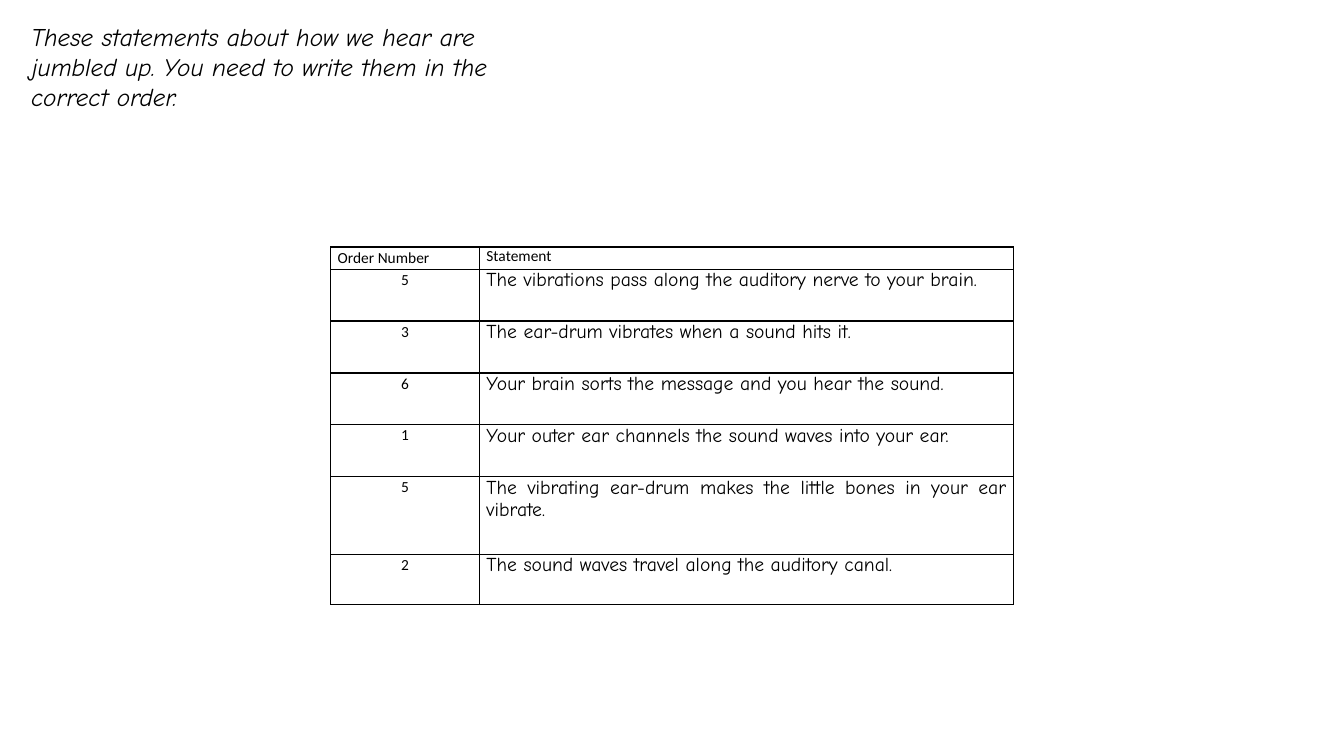
from dataclasses import dataclass

from lxml import etree
from pptx import Presentation
from pptx import util as u
from pptx.dml.color import RGBColor
from pptx.enum import text
from pptx.oxml import ns

STATEMENTS = [
    ("5", "The vibrations pass along the auditory nerve to your brain."),
    ("3", "The ear-drum vibrates when a sound hits it."),
    ("6", "Your brain sorts the message and you hear the sound."),
    ("1", "Your outer ear channels the sound waves into your ear."),
    ("5", "The vibrating ear-drum makes the little bones in your ear vibrate."),
    ("2", "The sound waves travel along the auditory canal."),
]


@dataclass(frozen=True)
class Theme:
    ink: str = "000000"
    hand_font: str = "Comic Neue"
    plain_font: str = "Calibri"
    instruction_size: int = 18
    statement_size: int = 14
    label_size: int = 11
    border_width: int = 1


def write(frame, wording, *, font, size, color, italic=False,
          align=text.PP_ALIGN.LEFT, line_spacing=None):
    para = frame.paragraphs[0]
    para.alignment = align
    para.line_spacing = line_spacing
    span = para.add_run()
    span.text = wording
    span.font.name = font
    span.font.size = u.Pt(size)
    span.font.italic = italic
    span.font.color.rgb = RGBColor.from_string(color)


class Page:
    """A slide on a grid of 133.3 columns by 75 rows, a tenth of an inch each."""

    CELL = u.Inches(0.1)

    def __init__(self, deck, theme):
        self.theme = theme
        self.slide = deck.slides.add_slide(deck.slide_layouts[6])

    def grid(self, *counts):
        return [u.Emu(round(count * self.CELL)) for count in counts]

    def instruction(self, wording, *place):
        box = self.slide.shapes.add_textbox(*self.grid(*place))
        box.text_frame.word_wrap = True
        write(box.text_frame, wording, font=self.theme.hand_font,
              size=self.theme.instruction_size, color=self.theme.ink, italic=True)

    def border(self, cell):
        properties = cell._tc.get_or_add_tcPr()
        for position, side in enumerate(("lnL", "lnR", "lnT", "lnB")):
            line = etree.Element(ns.qn(f"a:{side}"), w=str(u.Pt(self.theme.border_width)))
            fill = etree.SubElement(line, ns.qn("a:solidFill"))
            etree.SubElement(fill, ns.qn("a:srgbClr"), val=self.theme.ink)
            properties.insert(position, line)

    def cell(self, cell, wording, **style):
        cell.margin_left = cell.margin_right = u.Inches(0.07)
        cell.margin_top = cell.margin_bottom = 0
        cell.fill.background()
        self.border(cell)
        write(cell.text_frame, wording, color=self.theme.ink, **style)

    def statement_table(self, rows, left, top, widths, heights):
        place = self.grid(left, top, sum(widths), sum(heights))
        table = self.slide.shapes.add_table(len(heights), len(widths), *place).table
        table.first_row = table.horz_banding = False
        for column, width in zip(table.columns, self.grid(*widths)):
            column.width = width
        for row, height in zip(table.rows, self.grid(*heights)):
            row.height = height

        label = dict(font=self.theme.plain_font, size=self.theme.label_size)
        sentence = dict(font=self.theme.hand_font, size=self.theme.statement_size)
        center, justify = text.PP_ALIGN.CENTER, text.PP_ALIGN.JUSTIFY
        self.cell(table.cell(0, 0), "Order Number", line_spacing=1.07, **label)
        self.cell(table.cell(0, 1), "Statement", align=justify, **label)
        for index, (number, statement) in enumerate(rows, start=1):
            self.cell(table.cell(index, 0), number, align=center,
                      line_spacing=1.07, **label)
            self.cell(table.cell(index, 1), statement, align=justify, **sentence)


def main():
    deck = Presentation()
    deck.slide_width, deck.slide_height = u.Inches(13.33), u.Inches(7.5)
    page = Page(deck, Theme())
    page.instruction("These statements about how we hear are jumbled up. "
                     "You need to write them in the correct order.",
                     2.1, 1.6, 51.7, 10.1)
    page.statement_table(STATEMENTS, left=32.8, top=24.5, widths=(14.75, 53),
                         heights=(2.2, 5.15, 5.15, 5.15, 5.15, 7.7, 5))
    deck.save("out.pptx")


if __name__ == "__main__":
    main()
